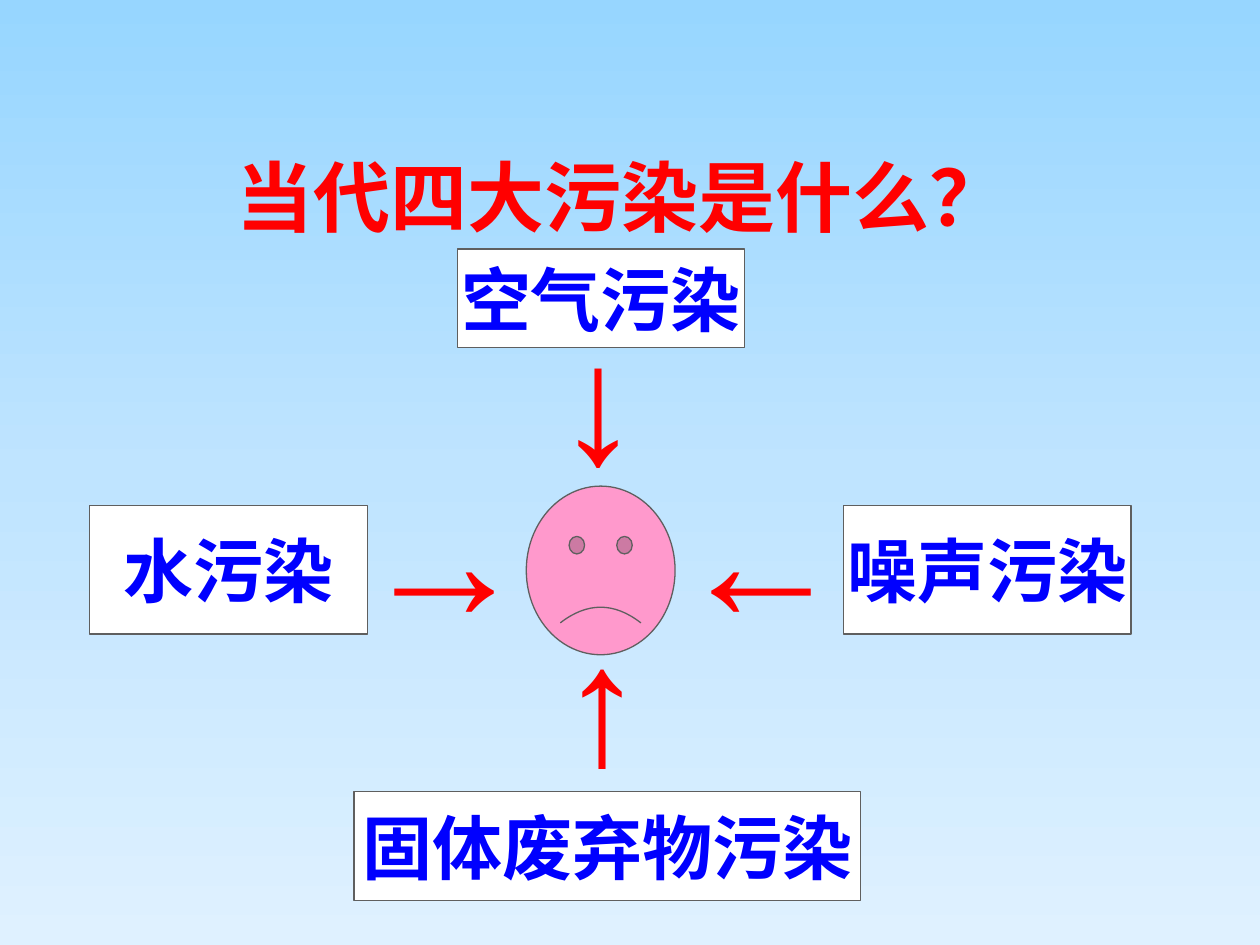
from copy import deepcopy
from dataclasses import dataclass

from pptx import Presentation
from pptx import util as u
from pptx.dml.color import RGBColor
from pptx.enum import shapes, text
from pptx.oxml.ns import qn


@dataclass(frozen=True)
class Theme:
    sky: tuple = ((0, "97D6FF"), (0.5, "BFE4FF"), (1, "DFF1FF"))
    paper: str = "FFFFFF"
    outline: str = "5F5F5F"
    face: str = "FF99CC"
    label: str = "0000FF"
    accent: str = "FF0000"
    chinese: str = "Noto Sans CJK SC"
    latin: str = "Arial"
    title_size: int = 44
    label_size: int = 40
    arrow_size: int = 96


class Board:
    """Holds the theme and the current slide; places are in centimetres."""

    def __init__(self, slide, theme):
        self.slide = slide
        self.theme = theme

    def sky(self):
        fill = self.slide.background.fill
        fill.gradient()
        fill.gradient_angle = 270
        first = fill.gradient_stops[0]._gs
        first.addnext(deepcopy(first))
        for stop, (position, color) in zip(fill.gradient_stops, self.theme.sky):
            stop.position = position
            stop.color.rgb = RGBColor.from_string(color)

    def add_words(self, frame, words, size, font, color, bold, align):
        paragraph = frame.paragraphs[0]
        paragraph.alignment = align
        run = paragraph.add_run()
        run.text = words
        run.font.size = u.Pt(size)
        run.font.bold = bold
        run.font.name = font
        run.font.color.rgb = RGBColor.from_string(color)
        # East Asian characters take their typeface from a:ea
        latin = run.font._element.find(qn("a:latin"))
        east_asian = latin.makeelement(qn("a:ea"), {"typeface": font})
        latin.addnext(east_asian)

    def outlined(self, kind, place, fill):
        shape = self.slide.shapes.add_shape(kind, *map(u.Cm, place))
        shape.shadow.inherit = False
        shape.fill.solid()
        shape.fill.fore_color.rgb = RGBColor.from_string(fill)
        shape.line.color.rgb = RGBColor.from_string(self.theme.outline)
        shape.line.width = u.Pt(0.75)
        return shape

    def label(self, words, place):
        t = self.theme
        frame = self.outlined(shapes.MSO_SHAPE.RECTANGLE, place, t.paper).text_frame
        frame.word_wrap = False
        frame.vertical_anchor = text.MSO_ANCHOR.MIDDLE
        self.add_words(frame, words, t.label_size, t.chinese, t.label, True,
                       text.PP_ALIGN.CENTER)

    def sad_face(self, place):
        face = self.outlined(shapes.MSO_SHAPE.SMILEY_FACE, place, self.theme.face)
        face.adjustments[0] = -0.05

    def text_box(self, place, wrap):
        frame = self.slide.shapes.add_textbox(*map(u.Cm, place)).text_frame
        frame.word_wrap = wrap
        frame.auto_size = text.MSO_AUTO_SIZE.SHAPE_TO_FIT_TEXT
        return frame

    def title(self, words, place):
        t = self.theme
        self.add_words(self.text_box(place, True), words, t.title_size, t.chinese,
                       t.accent, True, text.PP_ALIGN.CENTER)

    def arrow(self, glyph, place, wrap):
        t = self.theme
        self.add_words(self.text_box(place, wrap), glyph, t.arrow_size, t.latin,
                       t.accent, False, text.PP_ALIGN.LEFT)


def main():
    deck = Presentation()
    deck.slide_width, deck.slide_height = u.Cm(25.4), u.Cm(19.05)
    board = Board(deck.slides.add_slide(deck.slide_layouts[6]), Theme())
    board.sky()

    pollutions = (
        ("水污染", (1.8, 10.19, 5.61, 2.59)),
        ("空气污染", (9.22, 5.02, 5.79, 1.98)),
        ("固体废弃物污染", (7.14, 15.95, 10.21, 2.21)),
        ("噪声污染", (17.01, 10.19, 5.79, 2.59)),
    )
    for words, place in pollutions:
        board.label(words, place)

    board.sad_face((10.61, 9.8, 3, 3.4))
    board.title("当代四大污染是什么？", (4.29, 2.9, 16.48, 2.11))

    arrows = (
        ("↓", (10.97, 5.84, 1.57, 4.37), True),
        ("→", (7.01, 8.99, 3.89, 4.32), False),
        ("←", (13.41, 8.99, 3.89, 4.32), False),
        ("↑", (11.05, 11.91, 2.36, 4.37), True),
    )
    for glyph, place, wrap in arrows:
        board.arrow(glyph, place, wrap)

    deck.save("out.pptx")


if __name__ == "__main__":
    main()
